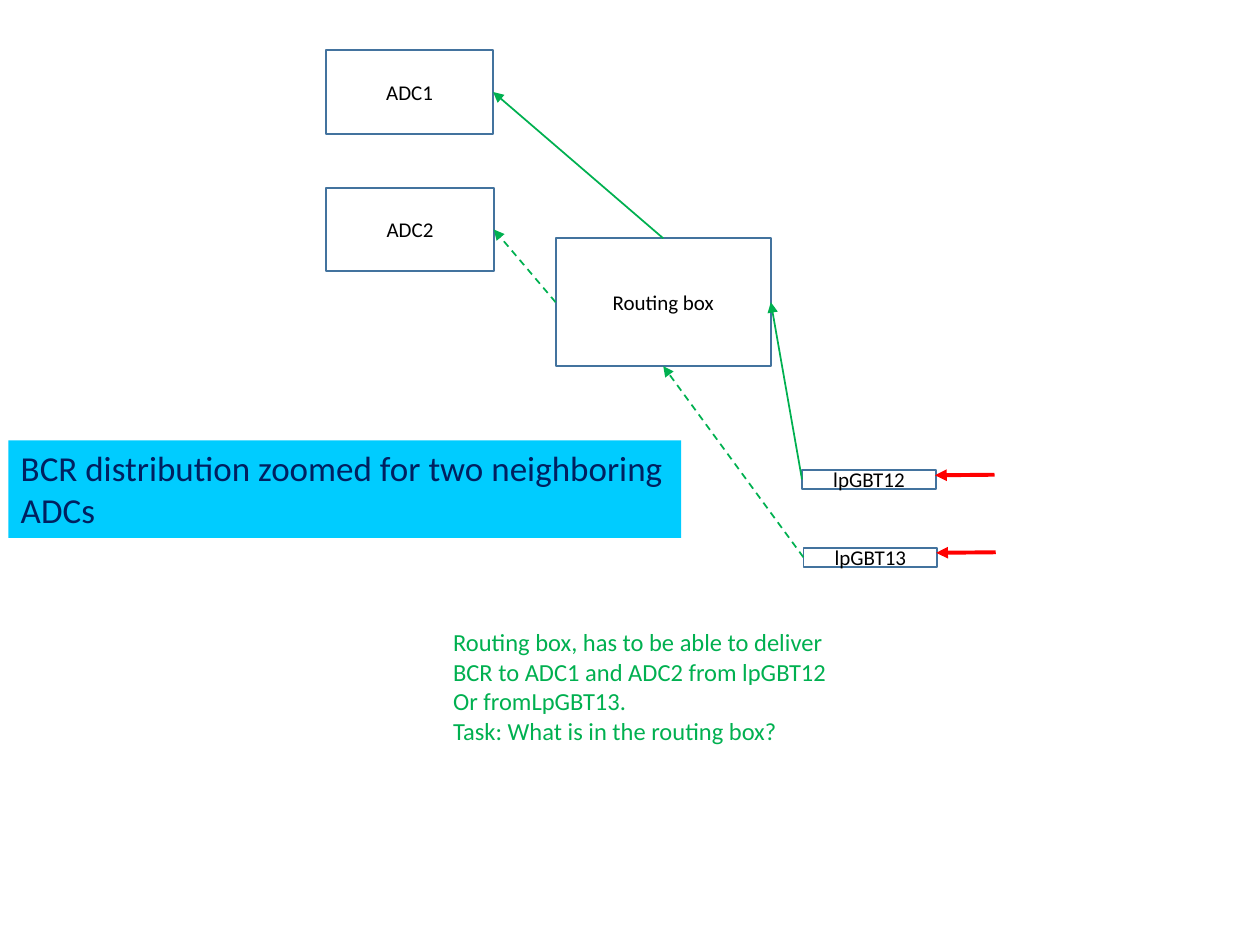
from pptx import Presentation
from pptx.dml.color import RGBColor
from pptx.enum import dml, shapes, text
from pptx.oxml.ns import qn
from pptx.util import Pt
from lxml import etree

HUES = {"edge": "43739E", "ink": "000000", "green": "00B050",
        "red": "FF0000", "band": "00CCFF", "navy": "002060"}


def write(shape, lines, size, hue, align):
    frame = shape.text_frame
    frame.text = "\n".join(lines)
    for para in frame.paragraphs:
        para.alignment = align
        para.font.name = "Calibri"
        para.font.size = Pt(size)
        para.font.color.rgb = RGBColor.from_string(HUES[hue])
    return frame


def arrow(start, end, hue, width):
    link = slide.shapes.add_connector(
        shapes.MSO_CONNECTOR.STRAIGHT, *[Pt(v) for v in start + end])
    link.line.color.rgb = RGBColor.from_string(HUES[hue])
    link.line.width = Pt(width)
    etree.SubElement(link.line._get_or_add_ln(), qn("a:tailEnd"), type="triangle")
    etree.SubElement(link._element.spPr, qn("a:effectLst"))
    return link


deck = Presentation()
deck.slide_width, deck.slide_height = Pt(720), Pt(540)
slide = deck.slides.add_slide(deck.slide_layouts[6])

boxes = {}
for name, left, top, width, height in [
    ("ADC1", 186.5, 28.6, 95.3, 48),
    ("ADC2", 186.5, 107.3, 95.7, 47.7),
    ("lpGBT12", 458.3, 268.5, 76.5, 10.9),
    ("lpGBT13", 459.1, 313, 76.5, 10.9),
    ("Routing box", 317.5, 136.2, 123, 73),
]:
    box = slide.shapes.add_shape(
        shapes.MSO_SHAPE.RECTANGLE, Pt(left), Pt(top), Pt(width), Pt(height))
    box.shadow.inherit = False
    box.fill.background()
    box.line.color.rgb = RGBColor.from_string(HUES["edge"])
    box.line.width = Pt(1)
    frame = write(box, [name], 12, "ink", text.PP_ALIGN.CENTER)
    frame.vertical_anchor = text.MSO_ANCHOR.MIDDLE
    boxes[name] = box

for source, out, target, into, dashed in [
    ("Routing box", 0, "ADC1", 3, False),
    ("Routing box", 1, "ADC2", 3, True),
    ("lpGBT12", 1, "Routing box", 3, False),
    ("lpGBT13", 1, "Routing box", 2, True),
]:
    link = arrow((0, 0), (0, 0), "green", 1)
    link.begin_connect(boxes[source], out)
    link.end_connect(boxes[target], into)
    if dashed:
        link.line.dash_style = dml.MSO_LINE.DASH

for left, top in [(534.3, 271.6), (535, 315.9)]:
    arrow((left + 34, top - 0.3), (left, top), "red", 2.25)

title = ["BCR distribution zoomed for two neighboring", "ADCs"]
note = ["Routing box, has to be able to deliver",
        "BCR to ADC1 and ADC2 from lpGBT12",
        "Or fromLpGBT13.",
        "Task: What is in the routing box?"]
for lines, left, top, width, height, size, hue, fill in [
    (title, 4.8, 251.7, 384.5, 55.7, 20, "navy", "band"),
    (note, 251.8, 355, 229.7, 74.9, 14, "green", None),
]:
    box = slide.shapes.add_textbox(Pt(left), Pt(top), Pt(width), Pt(height))
    if fill:
        box.fill.solid()
        box.fill.fore_color.rgb = RGBColor.from_string(HUES[fill])
    frame = write(box, lines, size, hue, text.PP_ALIGN.LEFT)
    frame.word_wrap = False
    frame.auto_size = text.MSO_AUTO_SIZE.SHAPE_TO_FIT_TEXT

deck.save("out.pptx")
